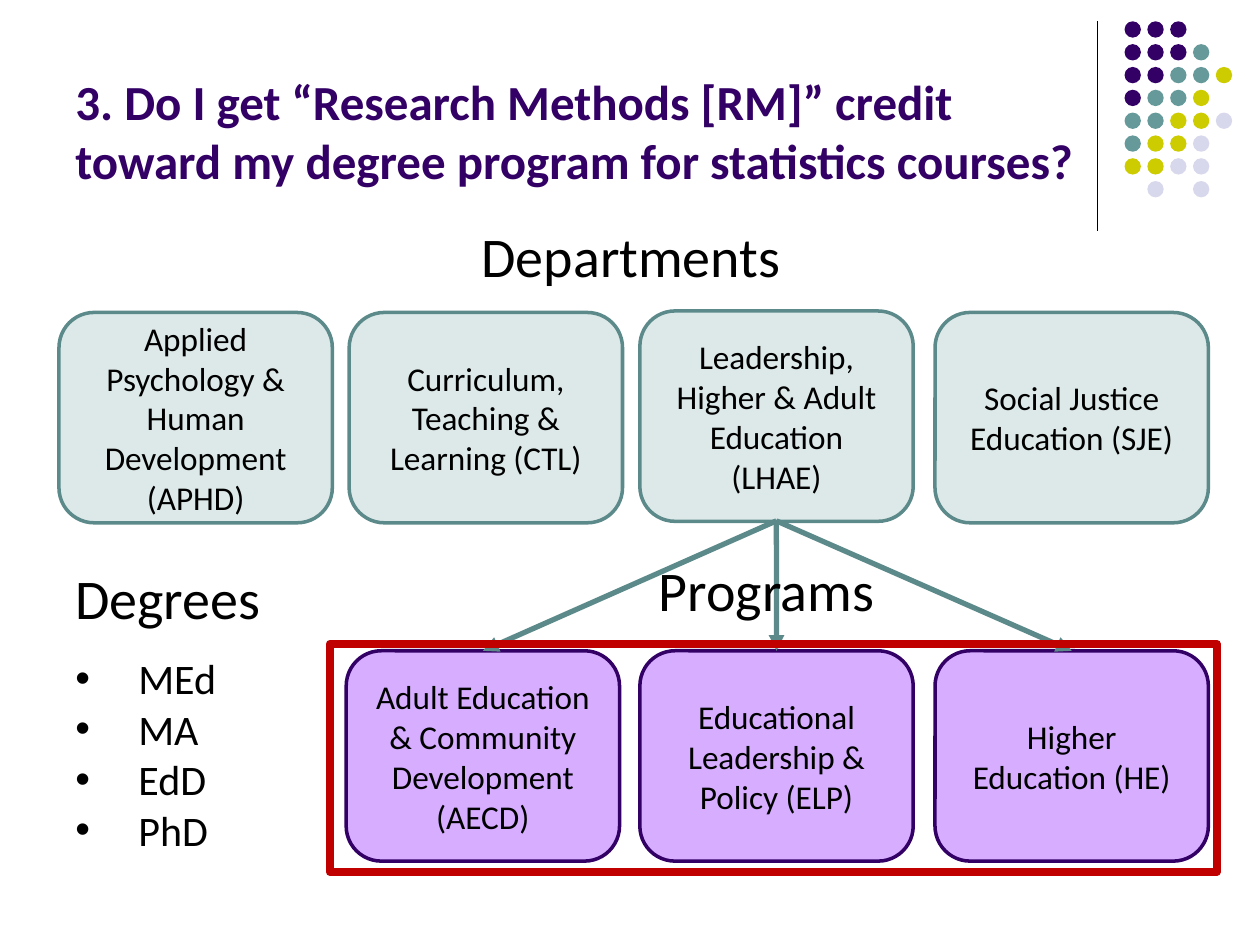
from pptx import Presentation
from pptx.dml.color import RGBColor
from pptx.enum.shapes import MSO_CONNECTOR, MSO_SHAPE
from pptx.enum.text import MSO_ANCHOR, PP_ALIGN
from pptx.oxml.ns import qn
from pptx.util import Cm, Pt
from lxml.etree import SubElement


def paint(item, color):
    if hasattr(item, "solid"):
        item.solid()
        item = item.fore_color
    item.rgb = RGBColor.from_string(color)


def write(shape, text, size, align=PP_ALIGN.LEFT, anchor=MSO_ANCHOR.TOP, color="000000", bold=False):
    frame = shape.text_frame
    frame.word_wrap = True
    frame.vertical_anchor = anchor
    frame.text = text
    for para in frame.paragraphs:
        para.alignment = align
        for run in para.runs:
            run.font.name = "Calibri"
            run.font.size = Pt(size)
            run.font.bold = bold
            paint(run.font.color, color)
    return frame


deck = Presentation()
deck.slide_width, deck.slide_height = Cm(25.4), Cm(19.05)
slide = deck.slides.add_slide(deck.slide_layouts[6])
shapes = slide.shapes

tints = {"P": "330066", "T": "669999", "Y": "CCCC00", "L": "D8D8EC"}
dots = ["PPP", "PPPT", "PPTTY", "PTTY", "TTYYL", "TYYL", "YYLL", " L L"]
for row, line in enumerate(dots):
    for col, key in enumerate(line):
        if key in tints:
            dot = shapes.add_shape(MSO_SHAPE.OVAL, Cm(22.67 + 0.46 * col), Cm(0.43 + 0.46 * row), Cm(0.33), Cm(0.33))
            dot.shadow.inherit = False
            paint(dot.fill, tints[key])
            dot.line.fill.background()

title = shapes.add_textbox(Cm(1.27), Cm(0.33), Cm(20.96), Cm(3.61))
write(title, "3. Do I get “Research Methods [RM]” credit toward my degree program for statistics courses?",
      28, anchor=MSO_ANCHOR.BOTTOM, color="330066", bold=True)

wide, high = 5.51, 4.24
green, violet = ("DDE9E9", "5C8A8A"), ("D6ADFF", "330066")
boxes = [
    (1.19, 6.3, green, "Applied Psychology & Human Development (APHD)"),
    (7.04, 6.3, green, "Curriculum, Teaching & Learning (CTL)"),
    (12.9, 6.27, green, "Leadership, Higher & Adult Education (LHAE)"),
    (18.85, 6.3, green, "Social Justice Education (SJE)"),
    (6.98, 13.12, violet, "Adult Education & Community Development (AECD)"),
    (12.9, 13.12, violet, "Educational Leadership & Policy (ELP)"),
    (18.85, 13.12, violet, "Higher Education (HE)"),
]
for left, top, (fill, edge), text in boxes:
    box = shapes.add_shape(MSO_SHAPE.ROUNDED_RECTANGLE, Cm(left), Cm(top), Cm(wide), Cm(high))
    box.shadow.inherit = False
    paint(box.fill, fill)
    paint(box.line.fill, edge)
    box.line.width = Pt(2)
    write(box, text, 19, PP_ALIGN.CENTER, MSO_ANCHOR.MIDDLE)

rule = (22.12, 0.43, 22.12, 4.65, "000000", 0.75, False)
links = [(15.65, 10.5, left + wide / 2, 13.12, "5C8A8A", 3, True) for left in (6.98, 12.9, 18.85)]
for *ends, color, width, arrow in [rule] + links:
    link = shapes.add_connector(MSO_CONNECTOR.STRAIGHT, *[Cm(end) for end in ends])
    paint(link.line.fill, color)
    link.line.width = Pt(width)
    if arrow:
        SubElement(link.line._get_or_add_ln(), qn("a:tailEnd"), type="triangle")
    SubElement(link._element.spPr, qn("a:effectLst"))

for left, top, width, text in [(8.94, 4.34, 7.57, "Departments"), (11.86, 11.07, 7.19, "Programs")]:
    head = shapes.add_textbox(Cm(left), Cm(top), Cm(width), Cm(1.63))
    write(head, text, 32, PP_ALIGN.CENTER)

frame = shapes.add_shape(MSO_SHAPE.RECTANGLE, Cm(6.65), Cm(12.98), Cm(17.88), Cm(4.6))
frame.shadow.inherit = False
frame.fill.background()
paint(frame.line.fill, "C00000")
frame.line.width = Pt(4.5)

list_box = shapes.add_textbox(Cm(1.27), Cm(11.23), Cm(5.08), Cm(6.4))
first, *rest = write(list_box, "Degrees\nMEd\nMA\nEdD\nPhD", 24).paragraphs
first.runs[0].font.size = Pt(32)
first.space_after = Pt(12.8)
for para in rest:
    props = para._p.get_or_add_pPr()
    props.set("marL", str(Cm(1.27)))
    props.set("indent", str(Cm(-1.27)))
    SubElement(props, qn("a:buFont"), typeface="Arial")
    SubElement(props, qn("a:buChar"), char="•")

deck.save("out.pptx")
